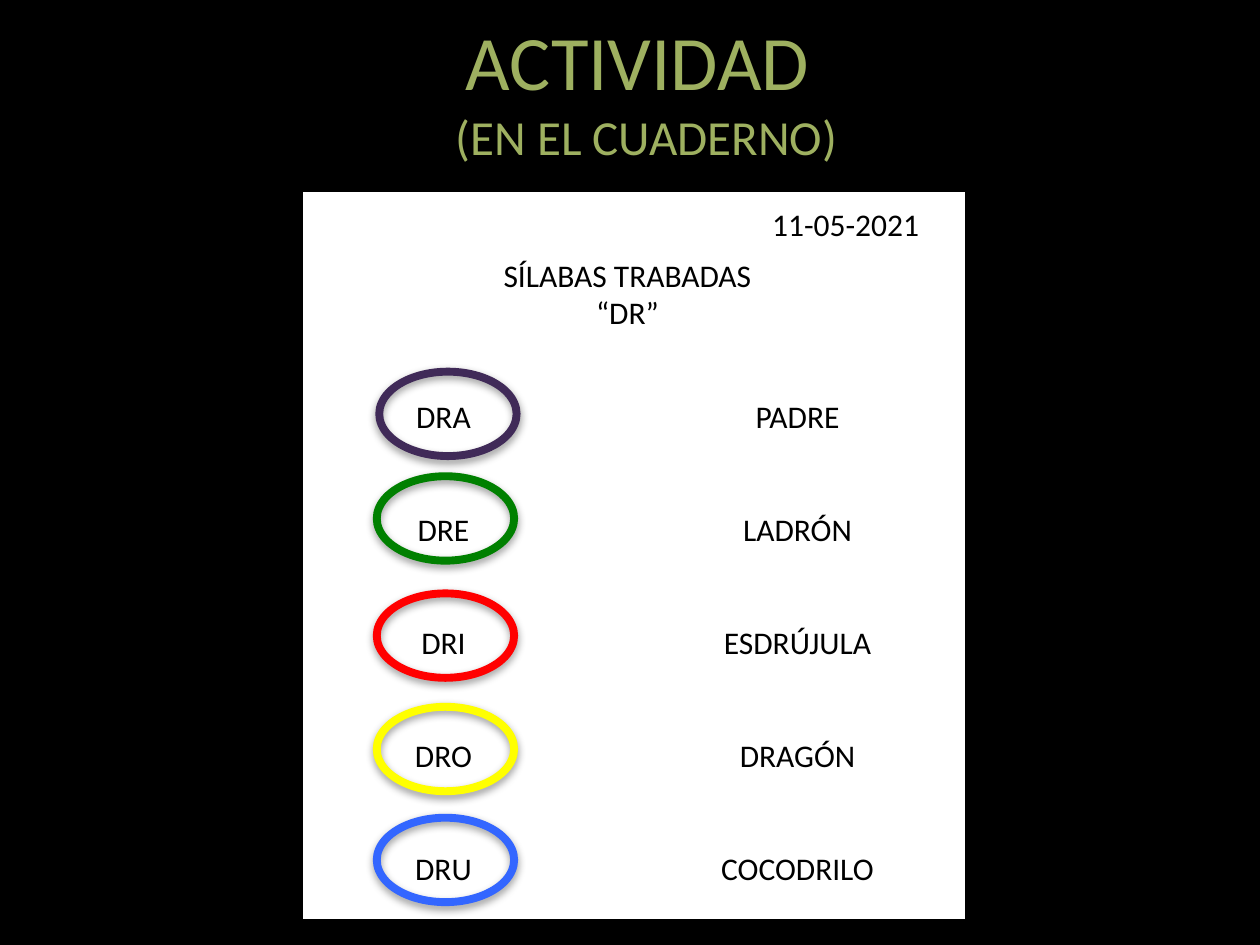
from lxml import etree
from pptx import Presentation
from pptx.dml.color import RGBColor
from pptx.enum import shapes, text
from pptx.oxml.ns import qn
from pptx.util import Inches, Pt

FONT = "Calibri"
BLACK, WHITE, OLIVE = "000000", "FFFFFF", "9EB060"
ROW_GAP = 43  # points between the words of a column

# syllable, word, ring colour, ring left, ring top
ROWS = [
    ("DRA", "PADRE", "402A58", 3.01, 2.95),
    ("DRE", "LADRÓN", "008000", 2.99, 3.78),
    ("DRI", "ESDRÚJULA", "FF0000", 2.99, 4.71),
    ("DRO", "DRAGÓN", "FFFF00", 2.99, 5.61),
    ("DRU", "COCODRILO", "3366FF", 2.99, 6.49),
]


def rgb(value):
    return RGBColor.from_string(value)


def add_run(paragraph, words, size=18, color=BLACK):
    run = paragraph.add_run()
    run.text = words
    run.font.name = FONT
    run.font.size = Pt(size)
    run.font.color.rgb = rgb(color)


def add_lines(slide, box, lines, align=text.PP_ALIGN.CENTER, gap=0, fill=None):
    """Add a text box with one paragraph per line, gap points apart."""
    label = slide.shapes.add_textbox(*map(Inches, box))
    if fill:
        label.fill.solid()
        label.fill.fore_color.rgb = rgb(fill)
    frame = label.text_frame
    frame.word_wrap = True
    for index, line in enumerate(lines):
        paragraph = frame.add_paragraph() if index else frame.paragraphs[0]
        paragraph.alignment = align
        paragraph.space_before = Pt(gap if index else 0)
        add_run(paragraph, line)


def add_title(slide):
    title = slide.shapes.add_textbox(*map(Inches, (0.6, 0.12, 9.06, 1.24)))
    frame = title.text_frame
    frame.word_wrap = True
    frame.vertical_anchor = text.MSO_ANCHOR.BOTTOM
    paragraph = frame.paragraphs[0]
    paragraph.alignment = text.PP_ALIGN.CENTER
    add_run(paragraph, "ACTIVIDAD ", 44, OLIVE)
    paragraph.add_line_break()
    add_run(paragraph, "(EN EL CUADERNO)", 28, OLIVE)


def add_page(slide):
    page = slide.shapes.add_shape(
        shapes.MSO_SHAPE.RECTANGLE, *map(Inches, (2.39, 1.51, 5.28, 5.8)))
    page.shadow.inherit = False
    page.fill.solid()
    page.fill.fore_color.rgb = rgb(WHITE)
    page.line.color.rgb = rgb(BLACK)
    page.line.width = Pt(2)


def add_soft_shadow(shape):
    shape.shadow.inherit = False
    effects = shape._element.spPr.find(qn("a:effectLst"))
    shadow = etree.SubElement(
        effects, qn("a:outerShdw"), blurRad=str(Pt(5)), dist=str(Pt(2)),
        dir="5400000", rotWithShape="0")
    color = etree.SubElement(shadow, qn("a:srgbClr"), val=BLACK)
    etree.SubElement(color, qn("a:alpha"), val="40000")


def add_ring(slide, left, top, color):
    ring = slide.shapes.add_shape(
        shapes.MSO_SHAPE.OVAL, *map(Inches, (left, top, 1.09, 0.67)))
    ring.fill.background()
    ring.line.color.rgb = rgb(color)
    ring.line.width = Pt(4.5)
    add_soft_shadow(ring)


def main():
    deck = Presentation()
    deck.slide_width, deck.slide_height = Inches(10), Inches(7.5)
    slide = deck.slides.add_slide(deck.slide_layouts[6])
    slide.background.fill.solid()
    slide.background.fill.fore_color.rgb = rgb(BLACK)

    add_title(slide)
    add_page(slide)
    add_lines(slide, (6.03, 1.58, 1.61, 0.4), ["11-05-2021"],
              align=text.PP_ALIGN.LEFT, fill=WHITE)
    add_lines(slide, (3.05, 1.98, 3.86, 0.71), ["SÍLABAS TRABADAS", "“DR”"],
              fill=WHITE)
    add_lines(slide, (5.46, 3.1, 1.74, 4.04), [row[1] for row in ROWS], gap=ROW_GAP)
    add_lines(slide, (2.65, 3.1, 1.74, 4.04), [row[0] for row in ROWS], gap=ROW_GAP)
    for _, _, color, left, top in ROWS:
        add_ring(slide, left, top, color)
    deck.save("out.pptx")


if __name__ == "__main__":
    main()
